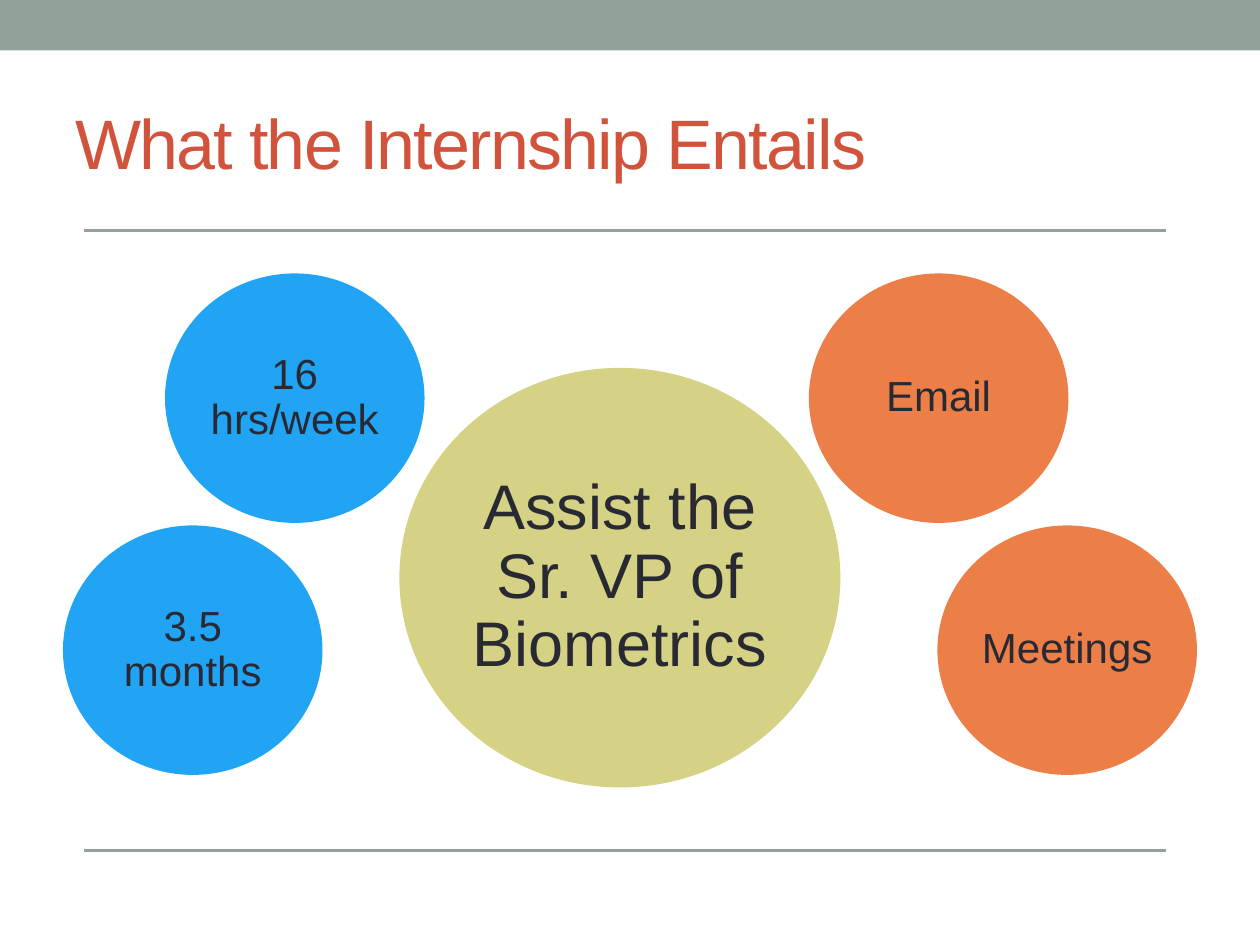
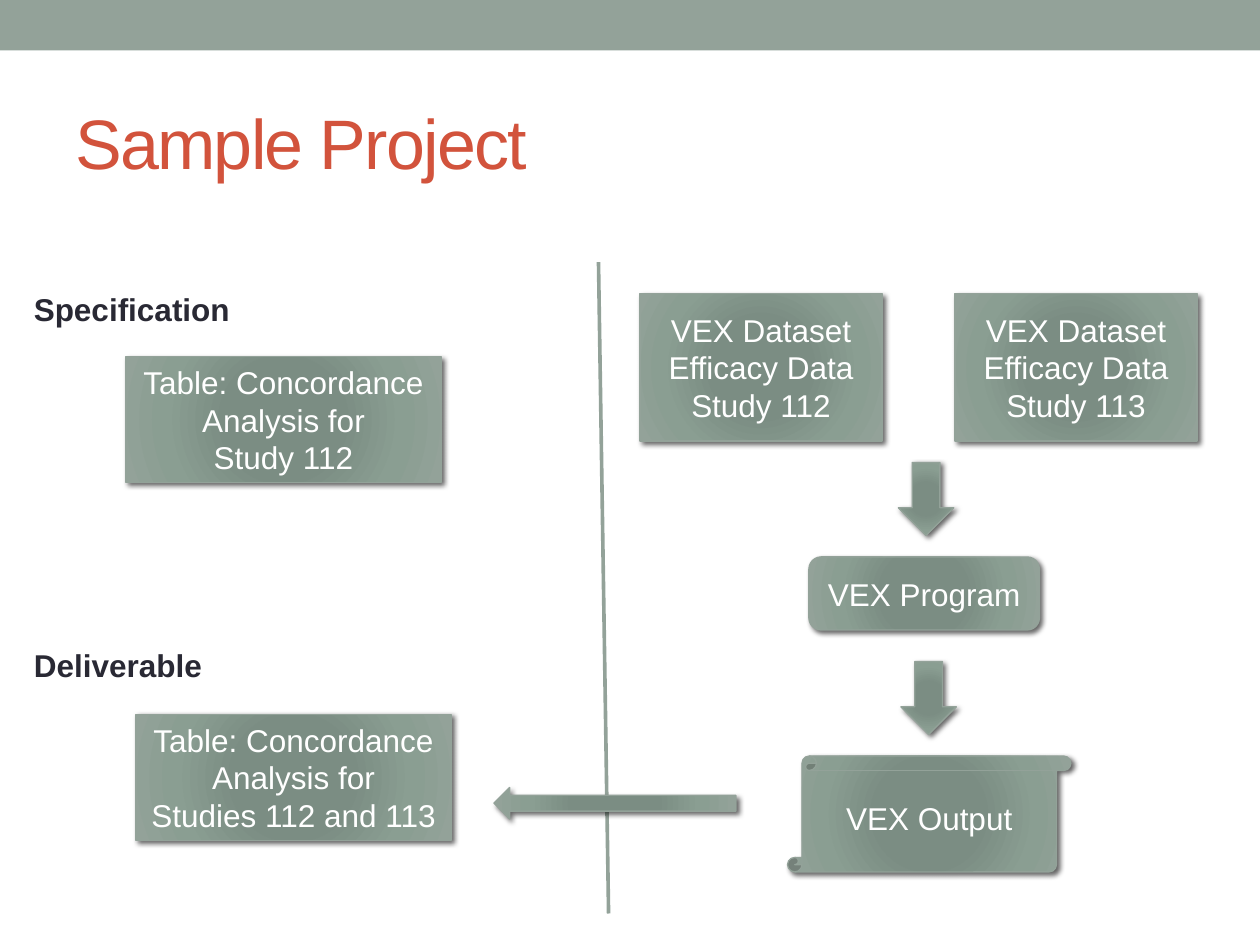
import pptx
import pptx.util
import pptx.dml.color
import pptx.enum.shapes
import pptx.enum.text
import pptx.oxml
import pptx.oxml.ns

Inches = pptx.util.Inches
Pt = pptx.util.Pt
Color = pptx.dml.color.RGBColor.from_string
Shape = pptx.enum.shapes.MSO_SHAPE
Align = pptx.enum.text.PP_ALIGN
Anchor = pptx.enum.text.MSO_ANCHOR

# Colours, type sizes and text formats
THEME = {
    "font": "Arial",
    "sage": "93A299",
    "duration": "22A4F4",
    "role": "D5D286",
    "contact": "EC7E48",
    "gradient": [(0, "7B8E82"), (34, "7B8D83"), (70, "8A9E92"), (100, "93A299")],
    "rule": 2.08,
    "title": {"size": Pt(40), "color": "D2533C"},
    "big circle": {"size": Pt(36), "color": "292934"},
    "circle": {"size": Pt(24), "color": "292934"},
    "step": {"size": Pt(18), "color": "FFFFFF"},
    "heading": {"size": Pt(18), "color": "292934", "bold": True},
}


def write(shape, lines, look, align=Align.CENTER, frame_format=None, spacing=None):
    """Put one paragraph per line into the shape and return the last run."""
    frame = shape.text_frame
    settings = {"word_wrap": True, "vertical_anchor": Anchor.MIDDLE, **(frame_format or {})}
    for name, value in settings.items():
        setattr(frame, name, value)
    for index, line in enumerate(lines):
        para = frame.paragraphs[0] if index == 0 else frame.add_paragraph()
        para.alignment = align
        para.line_spacing = spacing
        span = para.add_run()
        span.text = line
        span.font.name = THEME["font"]
        for name, value in THEME[look].items():
            if name == "color":
                span.font.color.rgb = Color(value)
            else:
                setattr(span.font, name, value)
    return span


def draw_rule(page, left, top, right, bottom):
    """Draw a thin sage line without a shadow."""
    rule = page.shapes.add_connector(
        pptx.enum.shapes.MSO_CONNECTOR.STRAIGHT,
        Inches(left), Inches(top), Inches(right), Inches(bottom))
    rule.line.color.rgb = Color(THEME["sage"])
    rule.line.width = Pt(THEME["rule"])
    rule._element.spPr.append(pptx.oxml.parse_xml(
        f'<a:effectLst {pptx.oxml.ns.nsdecls("a")}/>'))


deck = pptx.Presentation()
deck.slide_width = Inches(10)
deck.slide_height = Inches(7.5)

# Both pages: top band and title
pages = []
for title in ("What the Internship Entails", "Sample Project"):
    page = deck.slides.add_slide(deck.slide_layouts[6])
    band = page.shapes.add_shape(Shape.RECTANGLE, 0, 0, deck.slide_width, Inches(0.4))
    band.shadow.inherit = False
    band.fill.solid()
    band.fill.fore_color.rgb = Color(THEME["sage"])
    band.line.fill.background()
    box = page.shapes.add_textbox(Inches(0.5), Inches(0.58), Inches(9), Inches(1.08))
    span = write(box, [title], "title", Align.LEFT)
    span.font._element.set("spc", "-100")
    pages.append(page)
internship, project = pages

# Internship: circles around the main role
small = (2.06, 1.98)
upper, lower = 2.17, 4.17
circles = [
    ("Assist the Sr. VP of Biometrics", 3.17, 2.92, (3.5, 3.33), "role", "big circle", 0.05),
    ("16 hrs/week", 1.31, upper, small, "duration", "circle", 0.03),
    ("3.5 months", 0.5, lower, small, "duration", "circle", 0.03),
    ("Email", 6.42, upper, small, "contact", "circle", 0.03),
    ("Meetings", 7.44, lower, small, "contact", "circle", 0.03),
]
for label, left, top, (width, height), color, look, inset in circles:
    circle = internship.shapes.add_shape(
        Shape.OVAL, Inches(left), Inches(top), Inches(width), Inches(height))
    circle.shadow.inherit = False
    circle.fill.solid()
    circle.fill.fore_color.rgb = Color(THEME[color])
    circle.line.fill.background()
    margins = {f"margin_{side}": Inches(inset) for side in ("left", "top", "right", "bottom")}
    write(circle, [label], look, frame_format=margins, spacing=0.9)

# Internship: rules above and below the circles
for height in (1.83, 6.75):
    draw_rule(internship, 0.67, height, 9.25, height)

# Project: divider between documents and process
draw_rule(project, 4.75, 2.08, 4.83, 7.25)

# Project: documents, process steps and block arrows
dataset = "VEX Dataset Efficacy Data"
table = "Table: Concordance Analysis for"
steps = [
    (Shape.RECTANGLE, 5.08, 2.33, 1.92, 1.17, [dataset, "Study 112"]),
    (Shape.RECTANGLE, 7.58, 2.33, 1.92, 1.17, [dataset, "Study 113"]),
    (Shape.ROUNDED_RECTANGLE, 6.42, 4.42, 1.83, 0.58, ["VEX Program"]),
    (Shape.VERTICAL_SCROLL, 6.25, 6, 2.25, 0.92, ["VEX Output"]),
    (Shape.RECTANGLE, 1, 2.83, 2.5, 1, [table, "Study 112"]),
    (Shape.RECTANGLE, 1.08, 5.67, 2.5, 1, [table, "Studies 112 and 113"]),
    (Shape.DOWN_ARROW, 7.13, 3.67, 0.44, 0.58, []),
    (Shape.DOWN_ARROW, 7.15, 5.25, 0.44, 0.58, []),
    (Shape.LEFT_ARROW, 3.92, 6.25, 1.92, 0.25, []),
]
namespace = pptx.oxml.ns.nsdecls("a")
stops = "".join(
    f'<a:gs pos="{position * 1000}"><a:srgbClr val="{color}"/></a:gs>'
    for position, color in THEME["gradient"])
gradient_xml = (
    f'<a:gradFill {namespace} rotWithShape="1"><a:gsLst>{stops}</a:gsLst><a:path path="circle">'
    '<a:fillToRect l="100000" t="100000" r="100000" b="100000"/></a:path></a:gradFill>')
shadow_xml = (
    f'<a:outerShdw {namespace} blurRad="{Pt(3)}" dist="{Pt(2)}" dir="2700000" rotWithShape="0">'
    '<a:srgbClr val="000000"><a:alpha val="60000"/></a:srgbClr></a:outerShdw>')
for kind, left, top, width, height, lines in steps:
    step = project.shapes.add_shape(
        kind, Inches(left), Inches(top), Inches(width), Inches(height))
    step.line.color.rgb = Color(THEME["sage"])
    step.line.width = Pt(0.75)
    step.shadow.inherit = False
    properties = step._element.spPr
    properties.find(pptx.oxml.ns.qn("a:prstGeom")).addnext(pptx.oxml.parse_xml(gradient_xml))
    properties.find(pptx.oxml.ns.qn("a:effectLst")).append(pptx.oxml.parse_xml(shadow_xml))
    if lines:
        write(step, lines, "step")

# Project: headings of the document column
heading_format = {
    "word_wrap": False,
    "vertical_anchor": Anchor.TOP,
    "auto_size": pptx.enum.text.MSO_AUTO_SIZE.SHAPE_TO_FIT_TEXT,
}
for heading, top, width in (("Specification", 2.25, 1.77), ("Deliverable", 5.08, 1.55)):
    box = project.shapes.add_textbox(Inches(0.17), Inches(top), Inches(width), Inches(0.4))
    write(box, [heading], "heading", Align.LEFT, heading_format)

deck.save("out.pptx")
